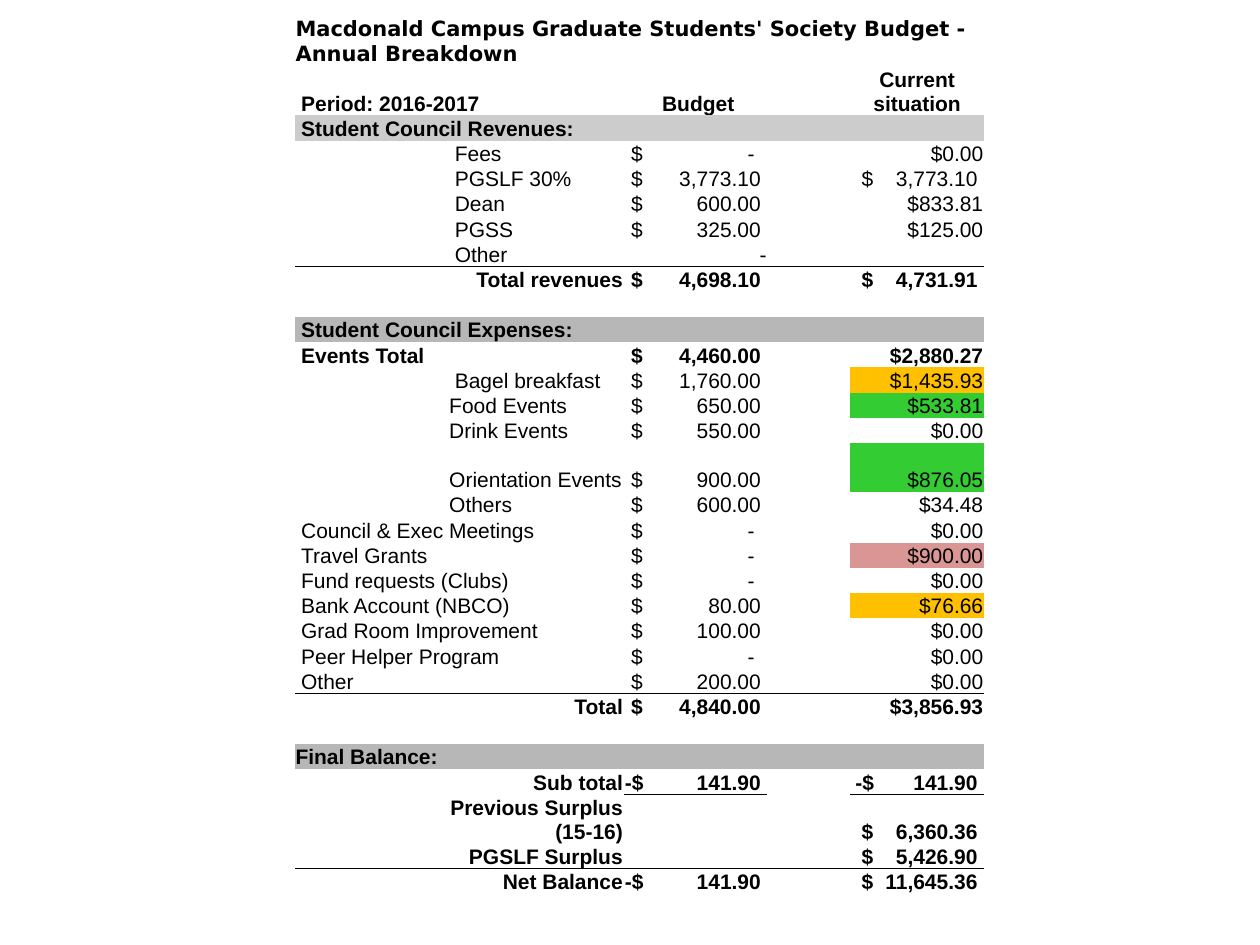
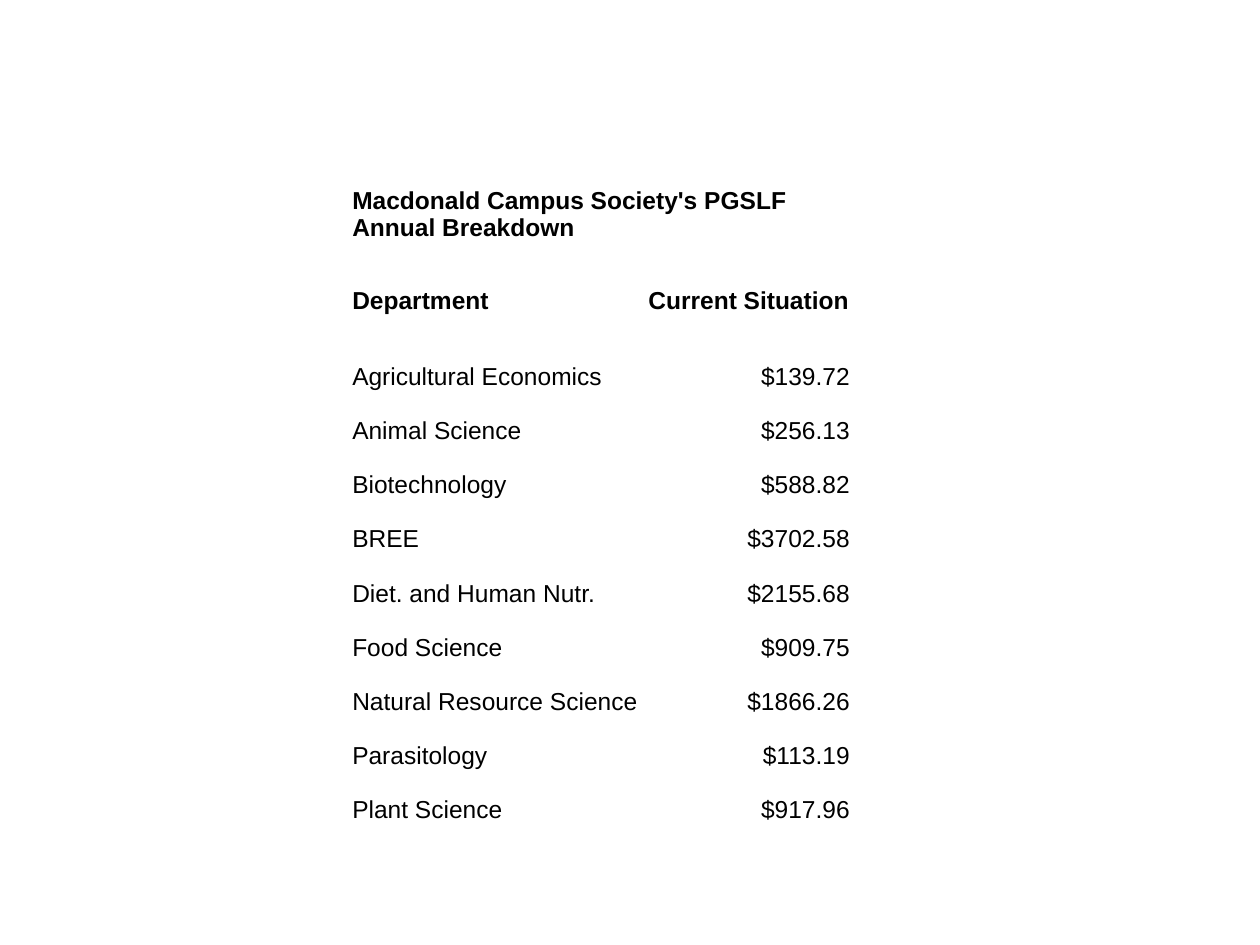
from lxml import etree
from pptx import Presentation
from pptx.dml.color import RGBColor
from pptx.enum.text import MSO_ANCHOR, PP_ALIGN
from pptx.oxml.ns import qn
from pptx.util import Inches, Pt

LEFT, CENTER, RIGHT = PP_ALIGN.LEFT, PP_ALIGN.CENTER, PP_ALIGN.RIGHT
BOTTOM = MSO_ANCHOR.BOTTOM
COLORS = {
    "text": "000000", "paper": "FFFFFF", "revenues": "CCCCCC",
    "section": "B7B7B7", "amber": "FFC000", "green": "33CC33", "red": "DA9694",
}
BODY_FONT, TITLE_FONT = "Arial", "DejaVu Sans"
NO_GRID_STYLE = "{2D5ABB26-0587-4C30-8999-92F81FD0307C}"
EDGE, INDENT = Pt(0.4).inches, 0.05
LINE_HEIGHT, DOUBLE_HEIGHT = 0.2, 0.39

# Budget columns: left edge of the dollar sign and right edge of the amount
BUDGET, CURRENT = 3, 5
ACCOUNTING = {BUDGET: (0.06, 1.09), CURRENT: (0.09, 1.01)}
SIGN_WIDTH = 0.05

# Row kinds: label column, columns spanned, and label format
KINDS = {
    "section": (0, 3, {"bold": True, "indent": INDENT}),
    "closing": (0, 2, {"bold": True}),
    "group total": (0, 3, {"bold": True, "indent": INDENT}),
    "group": (0, 3, {"indent": INDENT}),
    "source": (2, 1, {"indent": INDENT}),
    "event": (2, 1, {}),
    "sum": (2, 1, {"bold": True, "align": RIGHT}),
    "balance": (0, 3, {"bold": True, "align": RIGHT}),
    "blank": (0, 1, {}),
}

# Kind, label, budget, current situation, fill of the band or last cell
BUDGET_LINES = [
    ("section", "Student Council Revenues:", "", "", "revenues"),
    ("source", "Fees", "$ -", "$0.00", None),
    ("source", "PGSLF 30%", "$ 3,773.10", "$ 3,773.10", None),
    ("source", "Dean", "$ 600.00", "$833.81", None),
    ("source", "PGSS", "$ 325.00", "$125.00", None),
    ("source", "Other", "-", "", None),
    ("sum", "Total revenues", "$ 4,698.10", "$ 4,731.91", None),
    ("blank", "", "", "", None),
    ("section", "Student Council Expenses:", "", "", "section"),
    ("group total", "Events Total", "$ 4,460.00", "$2,880.27", None),
    ("source", "Bagel breakfast", "$ 1,760.00", "$1,435.93", "amber"),
    ("event", "Food Events", "$ 650.00", "$533.81", "green"),
    ("event", "Drink Events", "$ 550.00", "$0.00", None),
    ("event", "Orientation Events", "$ 900.00", "$876.05", "green"),
    ("event", "Others", "$ 600.00", "$34.48", None),
    ("group", "Council & Exec Meetings", "$ -", "$0.00", None),
    ("group", "Travel Grants", "$ -", "$900.00", "red"),
    ("group", "Fund requests (Clubs)", "$ -", "$0.00", None),
    ("group", "Bank Account (NBCO)", "$ 80.00", "$76.66", "amber"),
    ("group", "Grad Room Improvement", "$ 100.00", "$0.00", None),
    ("group", "Peer Helper Program", "$ -", "$0.00", None),
    ("group", "Other", "$ 200.00", "$0.00", None),
    ("sum", "Total", "$ 4,840.00", "$3,856.93", None),
    ("blank", "", "", "", None),
    ("closing", "Final Balance:", "", "", "section"),
    ("balance", "Sub total", "-$ 141.90", "-$ 141.90", None),
    ("sum", "Previous Surplus (15-16)", "", "$ 6,360.36", None),
    ("sum", "PGSLF Surplus", "", "$ 5,426.90", None),
    ("balance", "Net Balance", "-$ 141.90", "$ 11,645.36", None),
]
TALL_LABELS = ("Orientation Events", "Previous Surplus (15-16)")

DEPARTMENTS = [
    ("Agricultural Economics", "$139.72"),
    ("Animal Science", "$256.13"),
    ("Biotechnology", "$588.82"),
    ("BREE", "$3702.58"),
    ("Diet. and Human Nutr.", "$2155.68"),
    ("Food Science", "$909.75"),
    ("Natural Resource Science", "$1866.26"),
    ("Parasitology", "$113.19"),
    ("Plant Science", "$917.96"),
]


class Deck:
    """Holds the shared style and the slide and table being filled."""

    def __init__(self):
        self.prs = Presentation()
        self.prs.slide_width, self.prs.slide_height = Inches(10), Inches(7.5)
        self.slide = self.grid = None
        self.size = 12

    def new_slide(self):
        self.slide = self.prs.slides.add_slide(self.prs.slide_layouts[6])
        background = self.slide.background.fill
        background.solid()
        background.fore_color.rgb = RGBColor.from_string(COLORS["paper"])

    def table(self, left, top, widths, heights, size):
        self.size = size
        frame = self.slide.shapes.add_table(
            len(heights), len(widths), Inches(left), Inches(top),
            Inches(sum(widths)), Inches(sum(heights)))
        self.grid = frame.table
        self.grid.first_row = self.grid.horz_banding = False
        self.grid._tbl.tblPr.find(qn("a:tableStyleId")).text = NO_GRID_STYLE
        for column, width in zip(self.grid.columns, widths):
            column.width = Inches(width)
        for row, height in zip(self.grid.rows, heights):
            row.height = Inches(height)
        for cell in self.grid.iter_cells():
            self.clear(cell)

    def clear(self, cell):
        self.margins(cell, EDGE)
        cell.fill.background()
        # Empty cells keep the text size and font, so that rows stay low
        paragraph = cell.text_frame.paragraphs[0]._p
        end = etree.SubElement(paragraph, qn("a:endParaRPr"), sz=str(self.size * 100))
        etree.SubElement(end, qn("a:latin"), typeface=BODY_FONT)

    def margins(self, cell, left):
        layout = {"margin_left": Inches(left), "margin_right": Inches(EDGE),
                  "margin_top": Inches(EDGE), "margin_bottom": 0,
                  "vertical_anchor": BOTTOM}
        for name, value in layout.items():
            setattr(cell, name, value)

    def text(self, row, col, words, span=1, align=LEFT, bold=False,
             indent=EDGE, font=BODY_FONT):
        cell = self.grid.cell(row, col)
        if span > 1:
            cell.merge(self.grid.cell(row, col + span - 1))
        if not words:
            return cell
        self.margins(cell, indent)
        paragraph = cell.text_frame.paragraphs[0]
        paragraph.alignment = align
        run = paragraph.add_run()
        run.text = words
        style = {"name": font, "size": Pt(self.size), "bold": bold}
        for name, value in style.items():
            setattr(run.font, name, value)
        run.font.color.rgb = RGBColor.from_string(COLORS["text"])
        return cell

    def amount(self, row, col, words, bold):
        """Right-align an amount, or part its dollar sign from it by a tab."""
        sign, _, number = words.partition(" ")
        if not number:
            self.text(row, col, words, align=RIGHT, bold=bold)
            return
        start, end = ACCOUNTING[col]
        if sign.startswith("-"):
            start -= SIGN_WIDTH
        if number == "-":
            end -= SIGN_WIDTH
        cell = self.text(row, col, f"{sign}\t{number}", bold=bold, indent=start)
        properties = cell.text_frame.paragraphs[0]._p.get_or_add_pPr()
        tabs = etree.SubElement(properties, qn("a:tabLst"))
        etree.SubElement(tabs, qn("a:tab"), pos=str(Inches(end - start)), algn="r")

    def fill(self, row, columns, color):
        for col in columns:
            cell_fill = self.grid.cell(row, col).fill
            cell_fill.solid()
            cell_fill.fore_color.rgb = RGBColor.from_string(COLORS[color])

    def rule_below(self, row, columns):
        for col in columns:
            properties = self.grid.cell(row, col)._tc.get_or_add_tcPr()
            line = etree.Element(qn("a:lnB"), w=str(Pt(0.5)))
            solid = etree.SubElement(line, qn("a:solidFill"))
            etree.SubElement(solid, qn("a:srgbClr"), val=COLORS["text"])
            properties.insert(0, line)


def budget_slide(deck):
    deck.new_slide()
    heights = [DOUBLE_HEIGHT] * 2 + [
        DOUBLE_HEIGHT if line[1] in TALL_LABELS else LINE_HEIGHT
        for line in BUDGET_LINES]
    widths = [0.66, 0.56, 1.39, 1.14, 0.66, 1.06]
    deck.table(2.34, 0.13, widths, heights, 12)
    every_column = range(len(widths))

    # Title and column heads
    deck.text(0, 0, "Macdonald Campus Graduate Students' Society Budget - "
              "Annual Breakdown", span=6, bold=True, font=TITLE_FONT)
    deck.text(1, 0, "Period: 2016-2017", span=3, bold=True, indent=INDENT)
    deck.text(1, BUDGET, "Budget", align=CENTER, bold=True, indent=INDENT)
    deck.text(1, CURRENT, "Current situation", align=CENTER, bold=True)

    # Revenues, expenses and balance
    for row, (kind, label, budget, current, color) in enumerate(BUDGET_LINES, 2):
        label_col, span, style = KINDS[kind]
        deck.text(row, label_col, label, span=span, **style)
        for col, words in ((BUDGET, budget), (CURRENT, current)):
            deck.amount(row, col, words, style.get("bold", False))
        if color:
            is_band = kind in ("section", "closing")
            deck.fill(row, every_column if is_band else [CURRENT], color)

        # Lines above the totals and below the sub total
        if label in ("Other", "PGSLF Surplus"):
            deck.rule_below(row, every_column)
        elif label == "Sub total":
            deck.rule_below(row, (BUDGET, CURRENT))


def departments_slide(deck):
    deck.new_slide()
    heights = [0.78, 0.58, 0.6] + [0.43] * (len(DEPARTMENTS) - 1)
    deck.table(2.79, 1.14, [2.35, 1.61], heights, 14)

    # Title and column heads
    deck.text(0, 0, "Macdonald Campus Society's PGSLF Annual Breakdown",
              span=2, bold=True)
    for col, head in enumerate(("Department", "Current Situation")):
        deck.text(1, col, head, bold=True)

    # Departments
    for row, (department, balance) in enumerate(DEPARTMENTS, 2):
        deck.text(row, 0, department)
        deck.text(row, 1, balance, align=RIGHT)


def main():
    deck = Deck()
    budget_slide(deck)
    departments_slide(deck)
    deck.prs.save("out.pptx")


if __name__ == "__main__":
    main()
